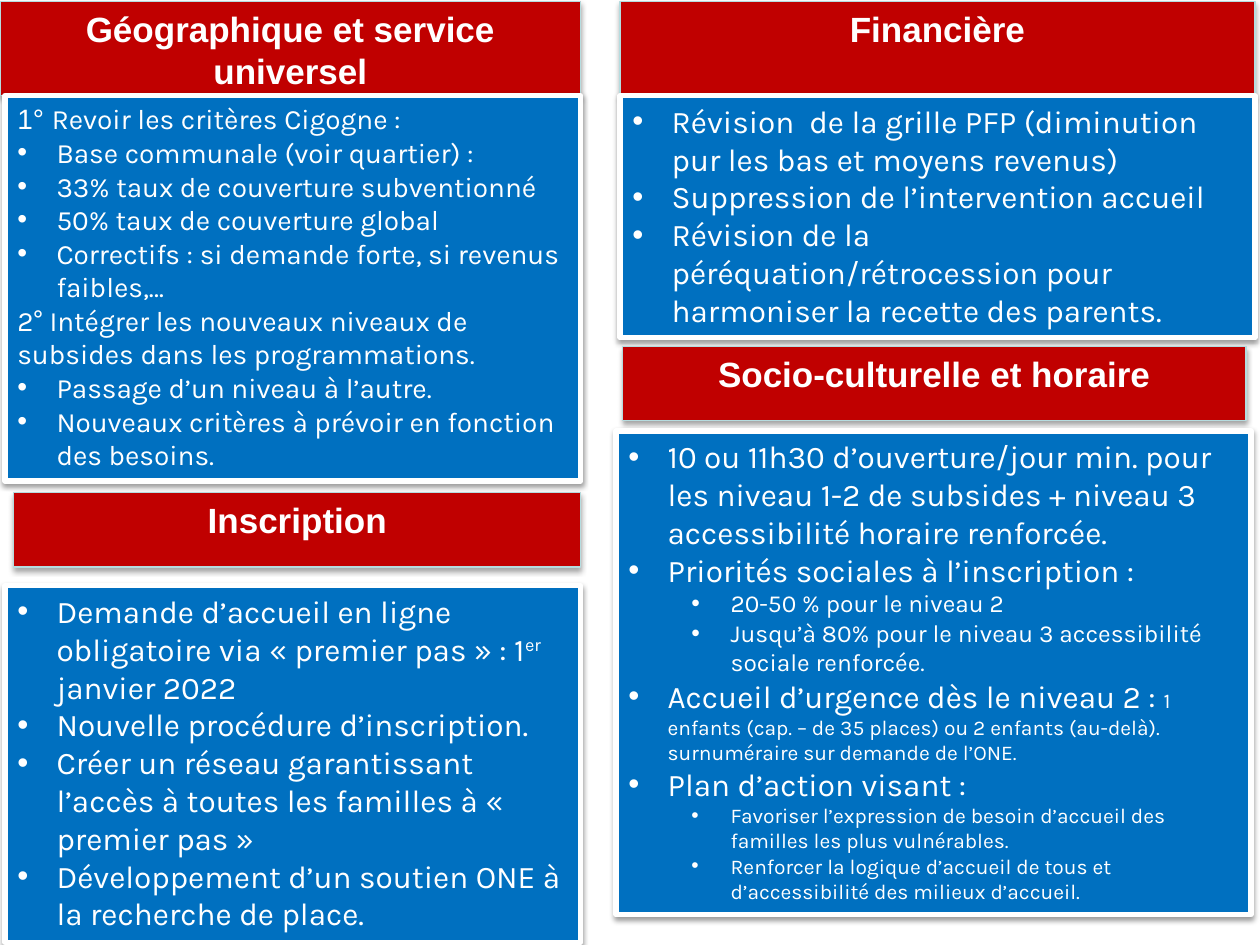
from lxml import etree
from pptx import Presentation
from pptx import util as u
from pptx.dml.color import RGBColor
from pptx.enum import shapes, text
from pptx.oxml.ns import qn

WHITE = RGBColor(0xFF, 0xFF, 0xFF)
RED = RGBColor(0xC0, 0x00, 0x00)
BLUE = RGBColor(0x00, 0x70, 0xC0)
PALE_TEAL = RGBColor(0xB6, 0xDC, 0xDF)
HANGING = u.Cm(0.79)
LEVEL_INDENTS = (HANGING, u.Cm(2.06))


def add_shadow(shape, distance, opacity):
    """Give the shape a soft shadow straight below it."""
    shape.shadow.inherit = False
    effects = shape._element.spPr.find(qn("a:effectLst"))
    shadow = etree.SubElement(effects, qn("a:outerShdw"), blurRad=str(u.Pt(3.1)),
                              dist=str(u.Pt(distance)), dir="5400000", rotWithShape="0")
    color = etree.SubElement(shadow, qn("a:srgbClr"), val="000000")
    etree.SubElement(color, qn("a:alpha"), val=str(opacity * 1000))


def add_box(slide, left, top, width, height, fill, line, line_width):
    shape = slide.shapes.add_shape(shapes.MSO_SHAPE.RECTANGLE, u.Cm(left), u.Cm(top),
                                   u.Cm(width), u.Cm(height))
    shape.fill.solid()
    shape.fill.fore_color.rgb = fill
    shape.line.color.rgb = line
    shape.line.width = u.Pt(line_width)
    shape.text_frame.word_wrap = True
    shape.text_frame.vertical_anchor = text.MSO_ANCHOR.TOP
    return shape


def add_run(paragraph, words, size=18, font="Karla", bold=False, superscript=False):
    run = paragraph.add_run()
    run.text = words
    run.font.size = u.Pt(size)
    run.font.name = font
    run.font.bold = bold
    run.font.color.rgb = WHITE
    if superscript:
        run._r.get_or_add_rPr().set("baseline", "30000")


def set_bullet(paragraph, level):
    paragraph.level = level
    properties = paragraph._p.get_or_add_pPr()
    properties.set("marL", str(LEVEL_INDENTS[level]))
    properties.set("indent", str(-HANGING))
    etree.SubElement(properties, qn("a:buFont"), typeface="Arial")
    etree.SubElement(properties, qn("a:buChar"), char="•")


def add_heading(slide, box, words):
    shape = add_box(slide, *box, RED, PALE_TEAL, 0.75)
    add_shadow(shape, 1.8, 35)
    paragraph = shape.text_frame.paragraphs[0]
    paragraph.alignment = text.PP_ALIGN.CENTER
    add_run(paragraph, words, size=20, font="Arial", bold=True)


def add_body(slide, box, items, size):
    """Items are (bullet level or None, run, ...); a run is text or (text, format)."""
    shape = add_box(slide, *box, BLUE, WHITE, 3)
    add_shadow(shape, 1.6, 38)
    frame = shape.text_frame
    frame.auto_size = text.MSO_AUTO_SIZE.SHAPE_TO_FIT_TEXT
    for index, (level, *runs) in enumerate(items):
        paragraph = frame.add_paragraph() if index else frame.paragraphs[0]
        paragraph.alignment = text.PP_ALIGN.LEFT
        if level is not None:
            set_bullet(paragraph, level)
        for run in runs:
            words, style = (run, {}) if isinstance(run, str) else run
            add_run(paragraph, words, **{"size": size, **style})


def add_panel(slide, box, title, items, heading, body_top, size=18):
    """Heading is (left offset, width, height); body_top is measured from the box top."""
    left, top, width, height = box
    offset, heading_width, heading_height = heading
    add_heading(slide, (left + offset, top, heading_width, heading_height), title)
    add_body(slide, (left, top + body_top, width, height - body_top), items, size)


SMALL = {"size": 12}
MEDIUM = {"size": 14}

GEOGRAPHY = [
    (None, ("1° ", {"font": "Arial"}), "Revoir les critères Cigogne :"),
    (0, "Base communale (voir quartier) :"),
    (0, "33% taux de couverture subventionné"),
    (0, "50% taux de couverture global"),
    (0, "Correctifs : si demande forte, si revenus faibles,…"),
    (None, "2° Intégrer les nouveaux niveaux de subsides dans les programmations."),
    (0, "Passage d’un niveau à l’autre."),
    (0, "Nouveaux critères à prévoir en fonction des besoins."),
]
FINANCE = [
    (0, "Révision  de la grille PFP (diminution pur les bas et moyens revenus)"),
    (0, "Suppression de l’intervention accueil"),
    (0, "Révision de la péréquation/rétrocession pour harmoniser la recette des parents."),
]
ENROLMENT = [
    (0, "Demande d’accueil en ligne obligatoire via « premier pas » : 1",
     ("er", {"superscript": True}), " janvier 2022"),
    (0, "Nouvelle procédure d’inscription."),
    (0, "Créer un réseau garantissant l’accès à toutes les familles à « premier pas »"),
    (0, "Développement d’un soutien ONE à la recherche de place."),
]
SOCIETY = [
    (0, "10 ou 11h30 d’ouverture/jour min. pour les niveau 1-2 de subsides + niveau 3 "
        "accessibilité horaire renforcée."),
    (0, "Priorités sociales à l’inscription :"),
    (1, ("20-50 % pour le niveau 2", MEDIUM)),
    (1, ("Jusqu’à 80% pour le niveau 3 accessibilité sociale renforcée.", MEDIUM)),
    (0, "Accueil d’urgence dès le niveau 2 : ",
     ("1 enfants (cap. – de 35 places) ou 2 enfants (au-delà). "
      "surnuméraire sur demande de l’ONE.", SMALL)),
    (0, "Plan d’action visant :"),
    (1, ("Favoriser l’expression de besoin d’accueil des familles les plus vulnérables.", SMALL)),
    (1, ("Renforcer la logique d’accueil de tous et d’accessibilité des milieux d’accueil.",
         SMALL)),
]


def main():
    presentation = Presentation()
    presentation.slide_width = u.Cm(25.4)
    presentation.slide_height = u.Cm(19.05)
    slide = presentation.slides.add_slide(presentation.slide_layouts[6])
    add_panel(slide, (0.1, 0.03, 11.61, 9.67), "Géographique et service universel",
              GEOGRAPHY, heading=(-0.1, 11.71, 1.9), body_top=1.9, size=16)
    add_panel(slide, (12.5, 0.03, 12.8, 6.78), "Financière",
              FINANCE, heading=(0, 12.8, 1.9), body_top=1.9)
    add_panel(slide, (0.1, 9.93, 11.61, 9.07), "Inscription",
              ENROLMENT, heading=(0.18, 11.43, 1.5), body_top=1.88)
    add_panel(slide, (12.42, 6.98, 12.8, 11.46), "Socio-culturelle et horaire",
              SOCIETY, heading=(0.13, 12.57, 1.5), body_top=1.71)
    presentation.save("out.pptx")


if __name__ == "__main__":
    main()
